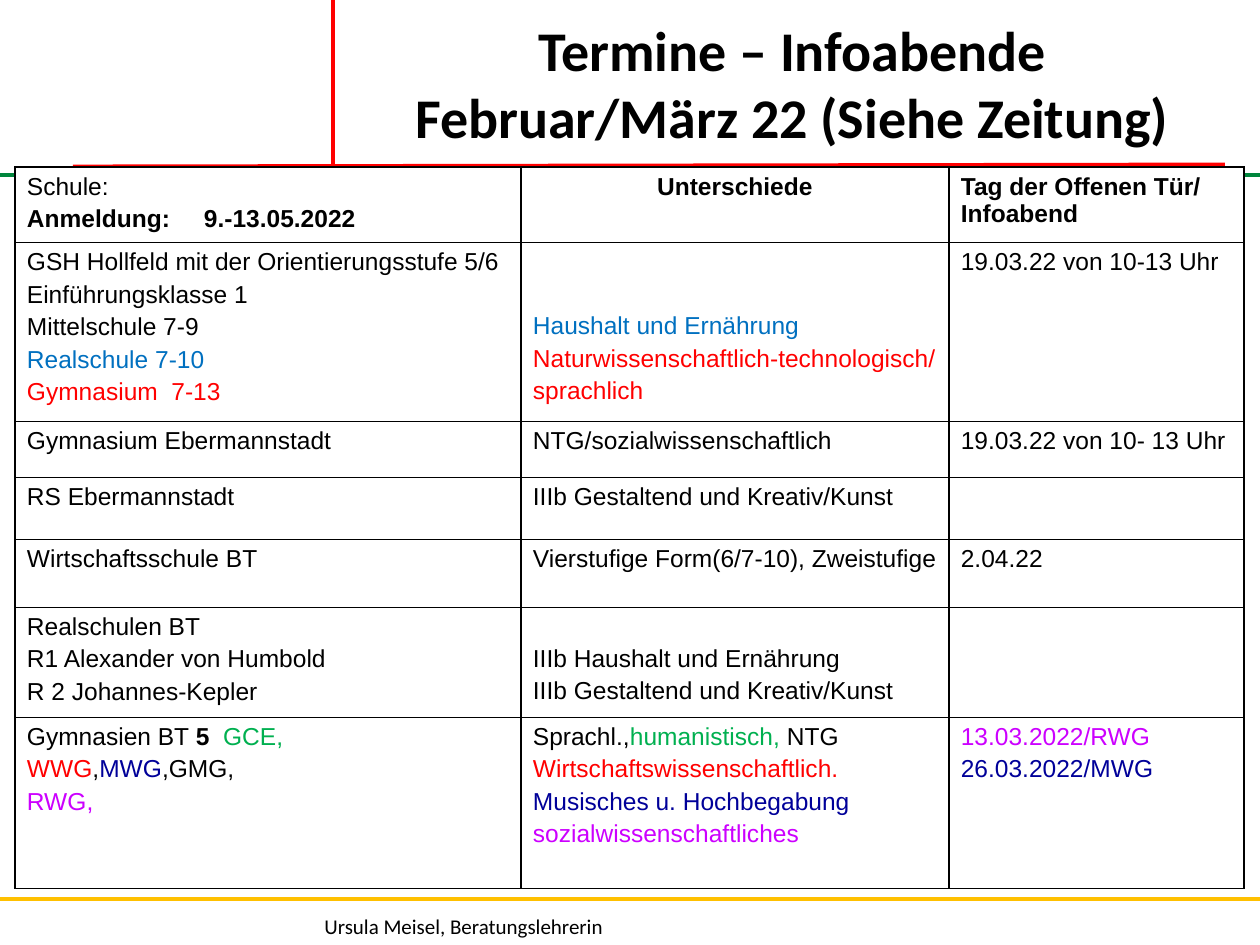
from collections import namedtuple
from itertools import product

from lxml.etree import SubElement
from pptx import Presentation
from pptx.dml.color import RGBColor
from pptx.enum.shapes import MSO_CONNECTOR
from pptx.enum.text import PP_ALIGN
from pptx.oxml.ns import qn
from pptx.util import Emu, Pt

BLACK, WHITE, RED, BLUE = "000000", "FFFFFF", "FF0000", "0070C0"
GREEN, NAVY, PURPLE = "00B050", "000099", "CC00FF"
LINE_PITCH = 32
DATE_TAB = 177
COLUMNS = [506, 428, 295]
ROWS = [74, 177, 56, 62, 68, 109, 171]

Span = namedtuple("Span", "text colour bold", defaults=(BLACK, False))
Cell = namedtuple("Cell", "paras skipped_lines align", defaults=(0, PP_ALIGN.LEFT))


def plain(*lines):
    """Return paragraphs of one plain black span each."""
    return [[Span(line)] for line in lines]


SCHEDULE = [
    [
        Cell([[Span("Schule:")], [Span("Anmeldung:\t9.-13.05.2022", bold=True)]]),
        Cell([[Span("Unterschiede", bold=True)]], align=PP_ALIGN.CENTER),
        Cell([[Span("Tag der Offenen Tür/ Infoabend", bold=True)]]),
    ],
    [
        Cell(plain("GSH Hollfeld mit der Orientierungsstufe 5/6",
                   "Einführungsklasse 1", "Mittelschule 7-9")
             + [[Span("Realschule 7-10", BLUE)], [Span("Gymnasium  7-13", RED)]]),
        Cell([[Span("Haushalt und Ernährung", BLUE)],
              [Span("Naturwissenschaftlich-technologisch/", RED)],
              [Span("sprachlich", RED)]], skipped_lines=2),
        Cell(plain("19.03.22 von 10-13 Uhr")),
    ],
    [
        Cell(plain("Gymnasium Ebermannstadt")),
        Cell(plain("NTG/sozialwissenschaftlich")),
        Cell(plain("19.03.22 von 10- 13 Uhr")),
    ],
    [
        Cell(plain("RS Ebermannstadt")),
        Cell(plain("IIIb Gestaltend und Kreativ/Kunst")),
        Cell([]),
    ],
    [
        Cell(plain("Wirtschaftsschule BT")),
        Cell(plain("Vierstufige Form(6/7-10), Zweistufige")),
        Cell(plain("2.04.22")),
    ],
    [
        Cell(plain("Realschulen BT", "R1 Alexander von Humbold", "R 2 Johannes-Kepler")),
        Cell(plain("IIIb Haushalt und Ernährung", "IIIb Gestaltend und Kreativ/Kunst"),
             skipped_lines=1),
        Cell([]),
    ],
    [
        Cell([[Span("Gymnasien BT "), Span("5  ", bold=True), Span("GCE,", GREEN)],
              [Span("WWG", RED), Span(","), Span("MWG", NAVY), Span(",GMG,")],
              [Span("RWG,", PURPLE)]]),
        Cell([[Span("Sprachl.,"), Span("humanistisch, ", GREEN), Span("NTG")],
              [Span("Wirtschaftswissenschaftlich.", RED)],
              [Span("Musisches u. Hochbegabung", NAVY)],
              [Span("sozialwissenschaftliches", PURPLE)]]),
        Cell([[Span("13.03.2022/RWG", PURPLE)], [Span("26.03.2022/MWG", NAVY)]]),
    ],
]


def px(length):
    """Turn pixels into EMU at 126 pixels to the inch."""
    return Emu(round(length * 914400 / 126))


def rgb(value):
    """Turn a hex string into a colour."""
    return RGBColor.from_string(value)


def style_font(font, colour, bold):
    """Set the colour and weight of a font."""
    font.color.rgb = rgb(colour)
    font.bold = bold


def add_rule(page, start, end, colour, width):
    """Draw a straight line without a shadow."""
    rule = page.shapes.add_connector(MSO_CONNECTOR.STRAIGHT,
                                     *map(px, start), *map(px, end))
    rule.line.color.rgb = rgb(colour)
    rule.line.width = Pt(width)
    SubElement(rule._element.spPr, qn("a:effectLst"))


def add_frame(page):
    """Draw the coloured rules that divide the slide."""
    add_rule(page, (0, 175), (1260, 175), "00863D", 2.75)
    add_rule(page, (333, 0), (333, 214), RED, 2)
    add_rule(page, (0, 899), (1260, 899), "FFC000", 2.75)
    add_rule(page, (73, 167), (1225, 165), RED, 2.75)


def add_label(page, box, text, size, bold, align):
    """Place one Calibri paragraph in the given box."""
    label = page.shapes.add_textbox(*map(px, box))
    label.text_frame.word_wrap = True
    para = label.text_frame.paragraphs[0]
    para.text = text
    para.alignment = align
    para.font.name = "Calibri"
    para.font.size = Pt(size)
    style_font(para.font, BLACK, bold)


def add_borders(table_cell):
    """Give a cell a thin black line on all four sides."""
    properties = table_cell._tc.get_or_add_tcPr()
    for index, side in enumerate(("lnL", "lnR", "lnT", "lnB")):
        line = SubElement(properties, qn(f"a:{side}"), w=str(Pt(1)))
        fill = SubElement(line, qn("a:solidFill"))
        SubElement(fill, qn("a:srgbClr"), val=BLACK)
        properties.insert(index, line)


def add_tab(para, position):
    """Add a left tab stop to a paragraph."""
    tabs = SubElement(para._p.get_or_add_pPr(), qn("a:tabLst"))
    SubElement(tabs, qn("a:tab"), pos=str(px(position)), algn="l")


def write_para(para, spans, align):
    """Write the spans of one table paragraph."""
    if any("\t" in span.text for span in spans):
        add_tab(para, DATE_TAB)
    para.alignment = align
    para.font.name = "Arial"
    para.font.size = Pt(14)
    if len(spans) == 1:
        style_font(para.font, spans[0].colour, spans[0].bold)
    for span in spans:
        run = para.add_run()
        run.text = span.text
        if len(spans) > 1:
            style_font(run.font, span.colour, span.bold)


def fill_cell(table_cell, content):
    """Fill one table cell with its paragraphs."""
    table_cell.fill.solid()
    table_cell.fill.fore_color.rgb = rgb(WHITE)
    add_borders(table_cell)
    table_cell.margin_left = table_cell.margin_right = px(12)
    table_cell.margin_top = px(6 + LINE_PITCH * content.skipped_lines)
    table_cell.margin_bottom = px(6)
    frame = table_cell.text_frame
    for index, spans in enumerate(content.paras):
        para = frame.add_paragraph() if index else frame.paragraphs[0]
        if index:
            para.space_before = Pt(2.8)
        write_para(para, spans, content.align)


def add_schedule(page, left, top):
    """Place the table of schools and dates."""
    table = page.shapes.add_table(len(ROWS), len(COLUMNS), px(left), px(top),
                                  px(sum(COLUMNS)), px(sum(ROWS))).table
    table.first_row = table.horz_banding = False
    for column, width in zip(table.columns, COLUMNS):
        column.width = px(width)
    for row, height in zip(table.rows, ROWS):
        row.height = px(height)
    for row, column in product(range(len(ROWS)), range(len(COLUMNS))):
        fill_cell(table.cell(row, column), SCHEDULE[row][column])


def main():
    """Build the slide and save it."""
    deck = Presentation()
    deck.slide_width, deck.slide_height = px(1260), px(945)
    page = deck.slides.add_slide(deck.slide_layouts[6])
    add_frame(page)
    add_label(page, (312, 907, 427, 38), "Ursula Meisel, Beratungslehrerin",
              12, False, PP_ALIGN.LEFT)
    add_label(page, (351, 9, 883, 139),
              "Termine – Infoabende\vFebruar/März 22 (Siehe Zeitung)",
              32, True, PP_ALIGN.CENTER)
    add_schedule(page, 15, 167)
    deck.save("out.pptx")


if __name__ == "__main__":
    main()
